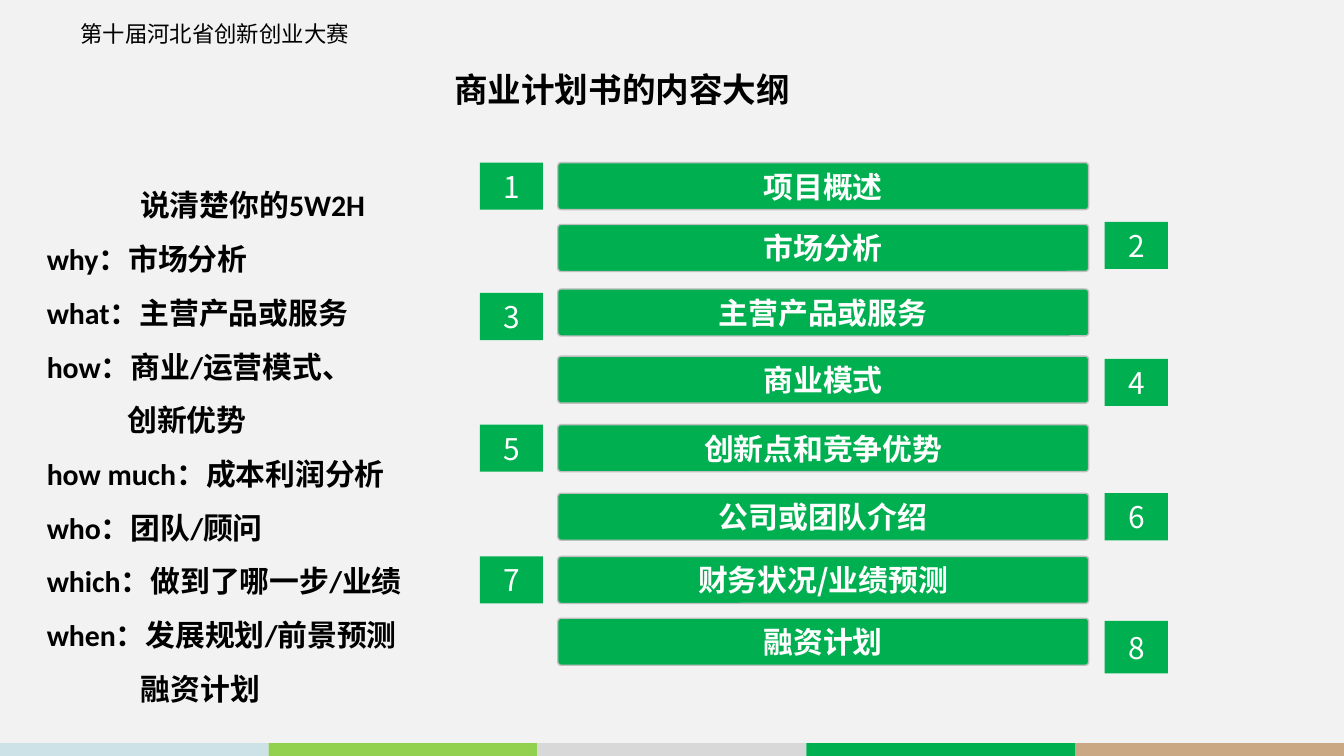
from pptx import Presentation
from pptx.dml.color import RGBColor
from pptx.enum.shapes import MSO_SHAPE
from pptx.enum.text import MSO_ANCHOR, PP_ALIGN
from pptx.oxml.ns import qn
from pptx.util import Inches, Pt
from lxml import etree

RECT = MSO_SHAPE.RECTANGLE
ROUND = MSO_SHAPE.ROUNDED_RECTANGLE
MIDDLE = MSO_ANCHOR.MIDDLE
CENTER = PP_ALIGN.CENTER
LATIN = "Calibri"
HAN = "Noto Sans CJK SC"
COLORS = {
    "page": "F2F2F2", "ink": "000000", "white": "FFFFFF", "edge": "BFBFBF",
    "green": "00B050", "ice": "CDE2E7", "lime": "92D050",
    "gray": "D8D8D8", "tan": "CAA884",
}


def style(para, size, face, color, bold=False):
    """Format every run, with one typeface for all Chinese characters."""
    for run in para.runs:
        font = run.font
        font.size, font.name, font.bold = Pt(size), face, bold
        font.color.rgb = RGBColor.from_string(COLORS[color])
        east = etree.SubElement(run._r.get_or_add_rPr(), qn("a:ea"))
        east.set("typeface", HAN)


def block(kind, left, top, width, height, fill, text="", bold=False):
    """Add a filled shape without outline, with centred white text."""
    shape = slide.shapes.add_shape(
        kind, Inches(left), Inches(top), Inches(width), Inches(height))
    shape.shadow.inherit = False
    shape.fill.solid()
    shape.fill.fore_color.rgb = RGBColor.from_string(COLORS[fill])
    shape.line.fill.background()
    if text:
        frame = shape.text_frame
        frame.text = text
        frame.vertical_anchor = MIDDLE
        frame.paragraphs[0].alignment = CENTER
        style(frame.paragraphs[0], 16, HAN, "white", bold)
    return shape


prs = Presentation()
prs.slide_width = Inches(10)
prs.slide_height = prs.slide_width * 9 // 16
slide = prs.slides.add_slide(prs.slide_layouts[6])
slide.background.fill.solid()
slide.background.fill.fore_color.rgb = RGBColor.from_string(COLORS["page"])

# Footer stripe
for i, name in enumerate(["ice", "lime", "gray", "green", "tan"]):
    block(RECT, 2 * i, 5.53, 2, 0.1, name)

# Event name and title
heads = [
    ("第十届河北省创新创业大赛", 0.5, 0.1, 5.56, 0.3, 12, False, 1),
    ("商业计划书的内容大纲", 3.28, 0.5, 3.01, 0.39, 18, True, 0.9),
]
for text, left, top, width, height, size, bold, space in heads:
    box = slide.shapes.add_textbox(
        Inches(left), Inches(top), Inches(width), Inches(height))
    frame = box.text_frame
    frame.word_wrap = True
    frame.text = text
    frame.paragraphs[0].line_spacing = space
    style(frame.paragraphs[0], size, LATIN, "ink", bold)

# Outline: bar text, bar top, number top; numbers alternate sides
items = [
    ("项目概述", 1.21, 1.21),
    ("市场分析", 1.67, 1.65),
    ("主营产品或服务", 2.15, 2.18),
    ("商业模式", 2.65, 2.67),
    ("创新点和竞争优势", 3.16, 3.16),
    ("公司或团队介绍", 3.67, 3.67),
    ("财务状况/业绩预测", 4.14, 4.14),
    ("融资计划", 4.6, 4.62),
]
for num, (text, top, tag_top) in enumerate(items, 1):
    bar = block(ROUND, 4.15, top, 3.95, 0.35, "green", text, True)
    bar.adjustments[0] = 0.07
    bar.line.color.rgb = RGBColor.from_string(COLORS["edge"])
    bar.line.width = Pt(0.75)
    left = 3.57 if num % 2 else 8.22
    height = 0.39 if num == len(items) else 0.35
    tag = block(ROUND, left, tag_top, 0.47, height, "green", str(num))
    tag.adjustments[0] = 0

# 5W2H list: text and left indent
lines = [
    ("说清楚你的5W2H", 0),
    ("why：市场分析", 0),
    ("what：主营产品或服务", 0),
    ("how：商业/运营模式、", 0),
    ("创新优势", 0.6),
    ("how much：成本利润分析", 0),
    ("who：团队/顾问", 0),
    ("which：做到了哪一步/业绩", 0),
    ("when：发展规划/前景预测", 0),
    ("融资计划", 0.7),
]
box = slide.shapes.add_textbox(
    Inches(0.25), Inches(1.21), Inches(3.26), Inches(4.54))
frame = box.text_frame
frame.word_wrap = True
frame.text = "\n".join(text for text, indent in lines)
for para, (text, indent) in zip(frame.paragraphs, lines):
    para.line_spacing = 1.5
    if indent:
        para._p.get_or_add_pPr().set("marL", str(Inches(indent)))
    style(para, 16, LATIN, "ink", True)
frame.paragraphs[0].alignment = CENTER

prs.save("out.pptx")
